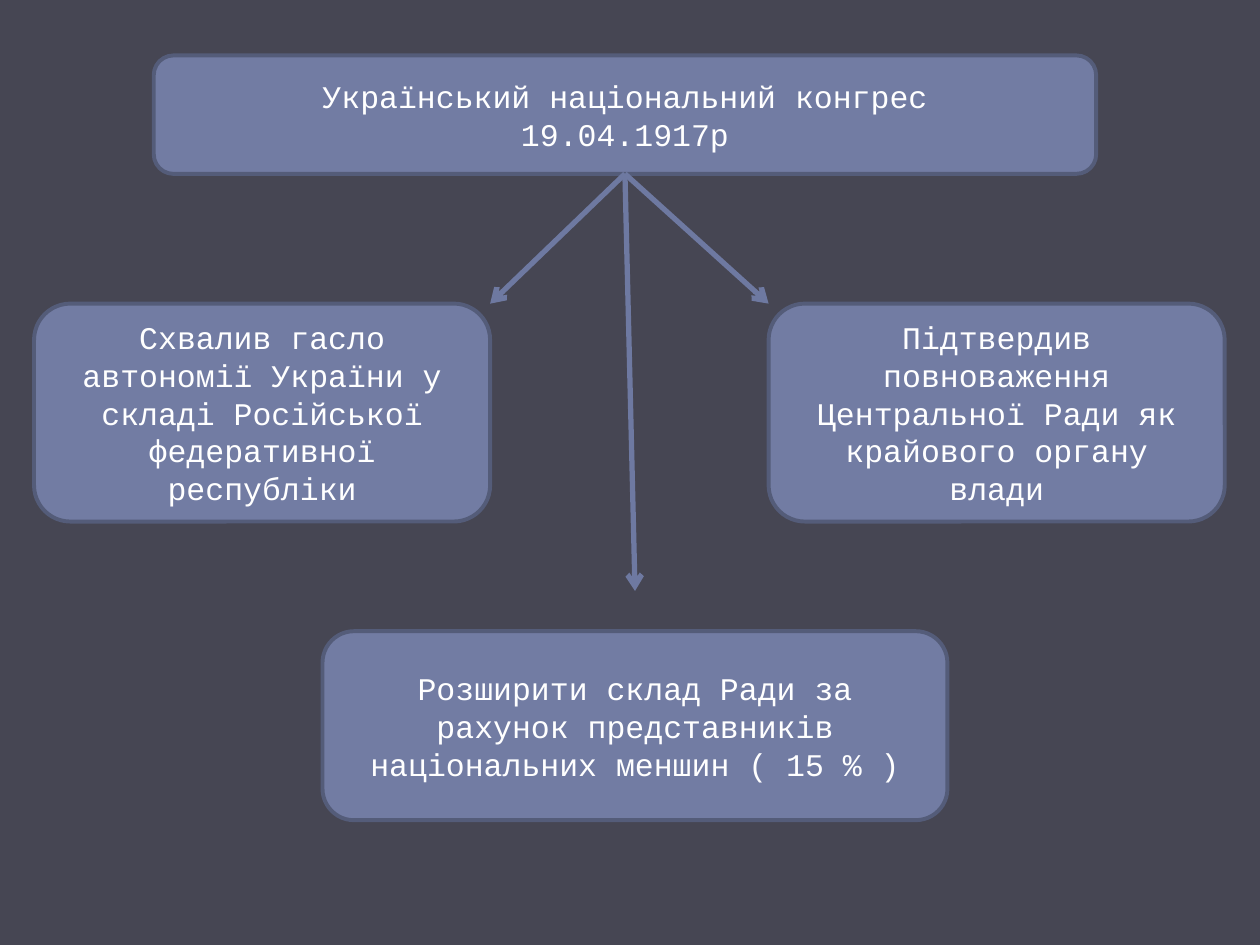
from dataclasses import dataclass

from lxml import etree
from pptx import Presentation
from pptx import util as u
from pptx.dml.color import RGBColor
from pptx.enum import shapes, text
from pptx.oxml import ns


@dataclass(frozen=True)
class Theme:
    background: str = "464653"
    fill: str = "727CA3"
    border: str = "545C79"
    arrow: str = "6E79A1"
    ink: str = "FFFFFF"
    font: str = "Courier New"
    size: float = 18
    border_width: float = 2.25
    arrow_width: float = 3


THEME = Theme()
SLIDE_SIZE = (10, 7.5)

CONGRESS = (["Український національний конгрес", "19.04.1917р"], (1.22, 0.44, 7.48, 0.94))
AUTONOMY = (["Схвалив гасло автономії України у складі Російської федеративної республіки"],
            (0.27, 2.41, 3.62, 1.73))
AUTHORITY = (["Підтвердив повноваження Центральної Ради як крайового органу влади"],
             (6.1, 2.41, 3.62, 1.73))
MINORITIES = (["Розширити склад Ради за рахунок представників національних меншин ( 15 % )"],
              (2.56, 5.01, 4.96, 1.5))
ARROW_GAP = 0.32


def rgb(color):
    return RGBColor.from_string(color)


def add_box(slide, lines, place):
    sp = slide.shapes.add_shape(shapes.MSO_SHAPE.ROUNDED_RECTANGLE, *map(u.Inches, place))
    sp.shadow.inherit = False
    sp.fill.solid()
    sp.fill.fore_color.rgb = rgb(THEME.fill)
    sp.line.color.rgb = rgb(THEME.border)
    sp.line.width = u.Pt(THEME.border_width)
    tf = sp.text_frame
    tf.word_wrap = True
    tf.vertical_anchor = text.MSO_ANCHOR.MIDDLE
    for i, line in enumerate(lines):
        p = tf.add_paragraph() if i else tf.paragraphs[0]
        p.alignment = text.PP_ALIGN.CENTER
        r = p.add_run()
        r.text = line
        r.font.name = THEME.font
        r.font.size = u.Pt(THEME.size)
        r.font.color.rgb = rgb(THEME.ink)


def add_arrow(slide, start, end):
    cxn = slide.shapes.add_connector(
        shapes.MSO_CONNECTOR.STRAIGHT, *map(u.Inches, (*start, *end)))
    cxn.line.color.rgb = rgb(THEME.arrow)
    cxn.line.width = u.Pt(THEME.arrow_width)
    etree.SubElement(cxn.line._get_or_add_ln(), ns.qn("a:tailEnd"), type="arrow")
    etree.SubElement(cxn._element.spPr, ns.qn("a:effectLst"))


def main():
    """Build the slide on the decisions of the national congress."""
    prs = Presentation()
    prs.slide_width, prs.slide_height = map(u.Inches, SLIDE_SIZE)
    s = prs.slides.add_slide(prs.slide_layouts[6])
    s.background.fill.solid()
    s.background.fill.fore_color.rgb = rgb(THEME.background)

    for lines, place in (CONGRESS, AUTONOMY, AUTHORITY, MINORITIES):
        add_box(s, lines, place)

    x, y, w, h = CONGRESS[1]
    start = (x + w / 2, y + h)
    left_x, left_y, left_w, _ = AUTONOMY[1]
    right_x, right_y, _, _ = AUTHORITY[1]
    low_x, low_y, low_w, _ = MINORITIES[1]
    ends = [
        (low_x + low_w / 2, low_y - ARROW_GAP),
        (left_x + left_w, left_y),
        (right_x, right_y),
    ]
    for end in ends:
        add_arrow(s, start, end)

    prs.save("out.pptx")


if __name__ == "__main__":
    main()
